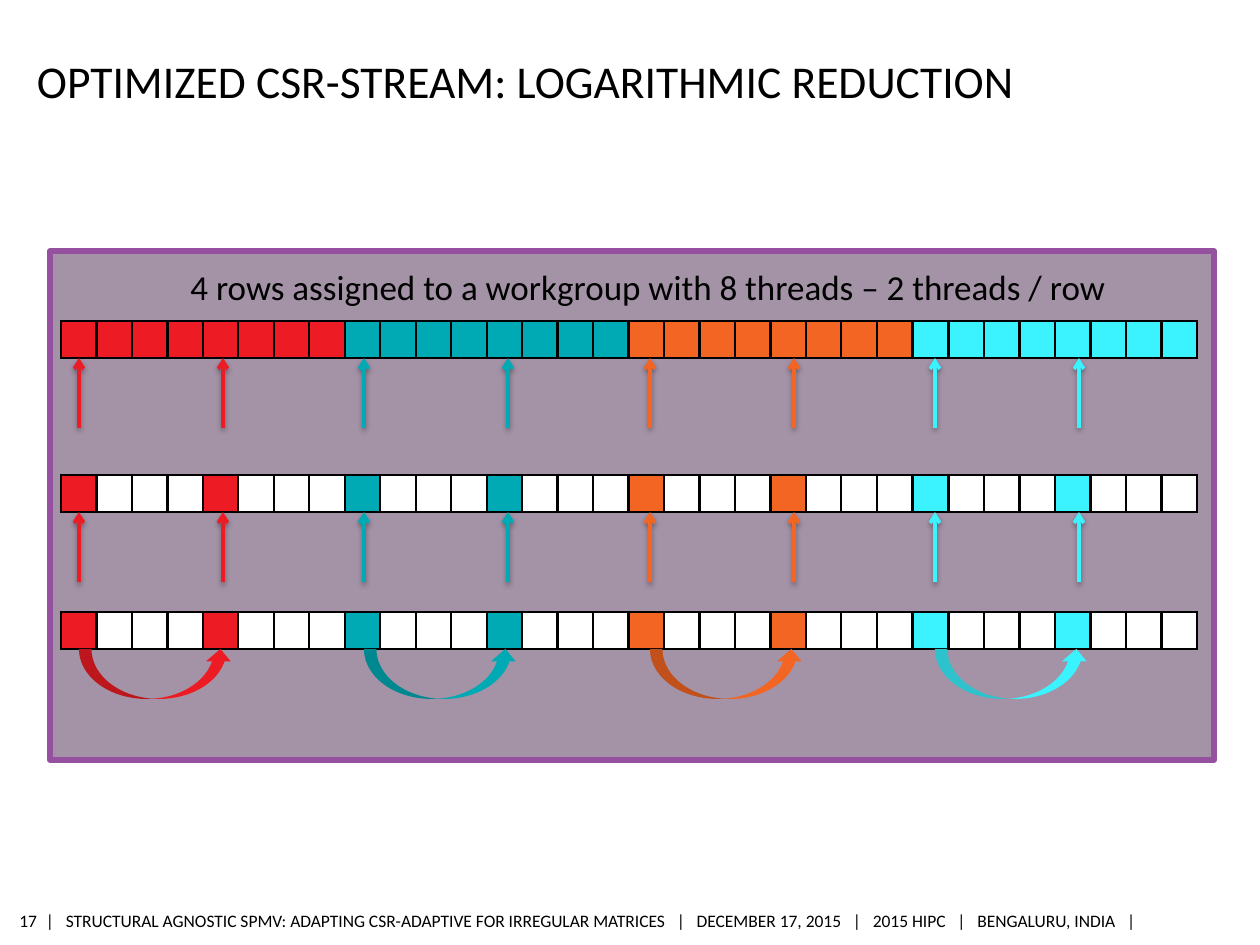
from lxml.etree import SubElement
from pptx import Presentation
from pptx.dml.color import RGBColor
from pptx.enum.shapes import MSO_CONNECTOR, MSO_SHAPE
from pptx.enum.text import MSO_ANCHOR, PP_ALIGN
from pptx.oxml import parse_xml
from pptx.oxml.ns import nsdecls, qn
from pptx.util import Pt

EMU_PER_PX = 914400 / 126
BLACK, WHITE = "000000", "FFFFFF"
ROW_COLORS = ["ED1C24", "00AAB5", "F26522", "3AF3FF"]
LAST_COLOR = ROW_COLORS[-1]
CELLS_PER_ROW = 8
CELLS_PER_THREAD = 4
ARROW_LEFT, THREAD_STEP = 79, 144
STRIP_LEFT, STRIP_HEIGHT = 61, 37
THREAD_WIDTH = 142


def px(n):
    return round(n * EMU_PER_PX)


def box(*lengths):
    return [px(n) for n in lengths]


def rgb(color):
    return RGBColor.from_string(color)


def row_left(row):
    # Four matrix rows share 1142 px
    return ARROW_LEFT + row * 1142 // 4


def add_text(s, at, text, size, anchor=MSO_ANCHOR.MIDDLE, wrap=False,
             align=PP_ALIGN.LEFT, margins=None):
    tf = s.shapes.add_textbox(*box(*at)).text_frame
    tf.word_wrap = wrap
    tf.vertical_anchor = anchor
    if margins:
        (tf.margin_left, tf.margin_top,
         tf.margin_right, tf.margin_bottom) = box(*margins)
    tf.text = text
    p = tf.paragraphs[0]
    p.alignment = align
    font = p.runs[0].font
    font.name, font.size = "Calibri", Pt(size)
    font.color.rgb = rgb(BLACK)
    return p


def add_panel(s):
    sp = s.shapes.add_shape(MSO_SHAPE.RECTANGLE, *box(50, 251, 1164, 509))
    sp.shadow.inherit = False
    sp.fill.solid()
    sp.fill.fore_color.rgb = rgb("4B2850")
    color = sp.fill._xPr.find(".//" + qn("a:srgbClr"))
    SubElement(color, qn("a:alpha"), val="50000")
    sp.line.color.rgb = rgb("9650A0")
    sp.line.width = Pt(3)


def format_cell(cell, color):
    cell.margin_left = cell.margin_right = 0
    cell.margin_top = cell.margin_bottom = 0
    # A small font keeps the empty cell at its row height
    p = cell.text_frame.paragraphs[0]
    SubElement(p._p, qn("a:endParaRPr"), sz="1000")
    tc_pr = cell._tc.get_or_add_tcPr()
    for side in ("lnL", "lnR", "lnT", "lnB"):
        tc_pr.append(parse_xml(
            f'<a:{side} {nsdecls("a")} w="{Pt(1.5)}"><a:solidFill>'
            f'<a:srgbClr val="{BLACK}"/></a:solidFill></a:{side}>'))
    cell.fill.solid()
    cell.fill.fore_color.rgb = rgb(color)


def add_strip(s, left, top, colors):
    width = THREAD_WIDTH * len(colors) // CELLS_PER_THREAD
    table = s.shapes.add_table(
        1, len(colors), *box(left, top, width, STRIP_HEIGHT)).table
    table.first_row = table.horz_banding = False
    for i, color in enumerate(colors):
        table.columns[i].width = px(width / len(colors))
        format_cell(table.cell(0, i), color)


def add_strips(s, top, colors, thread_colors):
    # The full strip, with the last row's two thread blocks on top
    add_strip(s, STRIP_LEFT, top, colors)
    for block in (6, 7):
        add_strip(s, STRIP_LEFT + block * THREAD_WIDTH, top, thread_colors)


def add_arrow(s, x, bottom, top, color):
    c = s.shapes.add_connector(MSO_CONNECTOR.STRAIGHT, *box(x, bottom, x, top))
    c.line.color.rgb = rgb(color)
    c.line.width = Pt(2)
    SubElement(c.line._get_or_add_ln(), qn("a:tailEnd"), type="arrow")
    c._element.spPr.append(parse_xml(
        f'<a:effectLst {nsdecls("a")}><a:outerShdw blurRad="40000" '
        f'dist="20000" dir="5400000" rotWithShape="0"><a:srgbClr val="{BLACK}">'
        '<a:alpha val="38000"/></a:srgbClr></a:outerShdw></a:effectLst>'))


def add_thread_arrows(s, top):
    for row, color in enumerate(ROW_COLORS):
        for thread in range(2):
            add_arrow(s, row_left(row) + thread * THREAD_STEP,
                      top + 70, top, color)


def add_curve(s, x, color):
    sp = s.shapes.add_shape(MSO_SHAPE.CURVED_UP_ARROW, *box(x, 649, 154, 50))
    sp.shadow.inherit = False
    sp.fill.solid()
    sp.fill.fore_color.rgb = rgb(color)
    sp.line.fill.background()


def main():
    prs = Presentation()
    prs.slide_width, prs.slide_height = box(1260, 945)
    s = prs.slides.add_slide(prs.slide_layouts[6])

    # Footer and page number
    add_text(s, (46, 904, 1100, 33),
             "|   STRUCTURAL AGNOSTIC SPMV: ADAPTING CSR-ADAPTIVE FOR IRREGULAR "
             "MATRICES   |   DECEMBER 17, 2015   |   2015 HIPC   |   "
             "BENGALURU, INDIA   |", 10, margins=(0, 5, 0, 5))
    add_text(s, (17, 904, 20, 33), "17", 10, align=PP_ALIGN.RIGHT,
             margins=(0, 5, 0, 5))

    # Panel, title and heading
    add_panel(s)
    add_text(s, (37, 43, 1058, 65),
             "OPTIMIZED CSR-STREAM: LOGARITHMIC REDUCTION", 26,
             anchor=MSO_ANCHOR.BOTTOM, wrap=True, margins=(0, 6, 0, 0))
    p = add_text(s, (178, 263, 953, 52),
                 "4 rows assigned to a workgroup with 8 threads – "
                 "2 threads / row", 20)
    p.line_spacing = 0.9

    # All values, and the partial sums the threads keep
    values = [c for c in ROW_COLORS for _ in range(CELLS_PER_ROW)]
    sums = [c if i % CELLS_PER_THREAD == 0 or c == LAST_COLOR else WHITE
            for i, c in enumerate(values)]
    thread_values = [LAST_COLOR] * CELLS_PER_THREAD
    thread_sums = [LAST_COLOR] + [WHITE] * (CELLS_PER_THREAD - 1)

    # Values read by the threads, then their sums
    add_strips(s, 321, values, thread_values)
    add_thread_arrows(s, 358)
    add_strips(s, 475, sums, thread_sums)
    add_thread_arrows(s, 512)
    add_strips(s, 612, sums, thread_sums)

    # Final reduction within each row
    for row, color in enumerate(ROW_COLORS):
        add_curve(s, row_left(row), color)

    prs.save("out.pptx")


if __name__ == "__main__":
    main()
